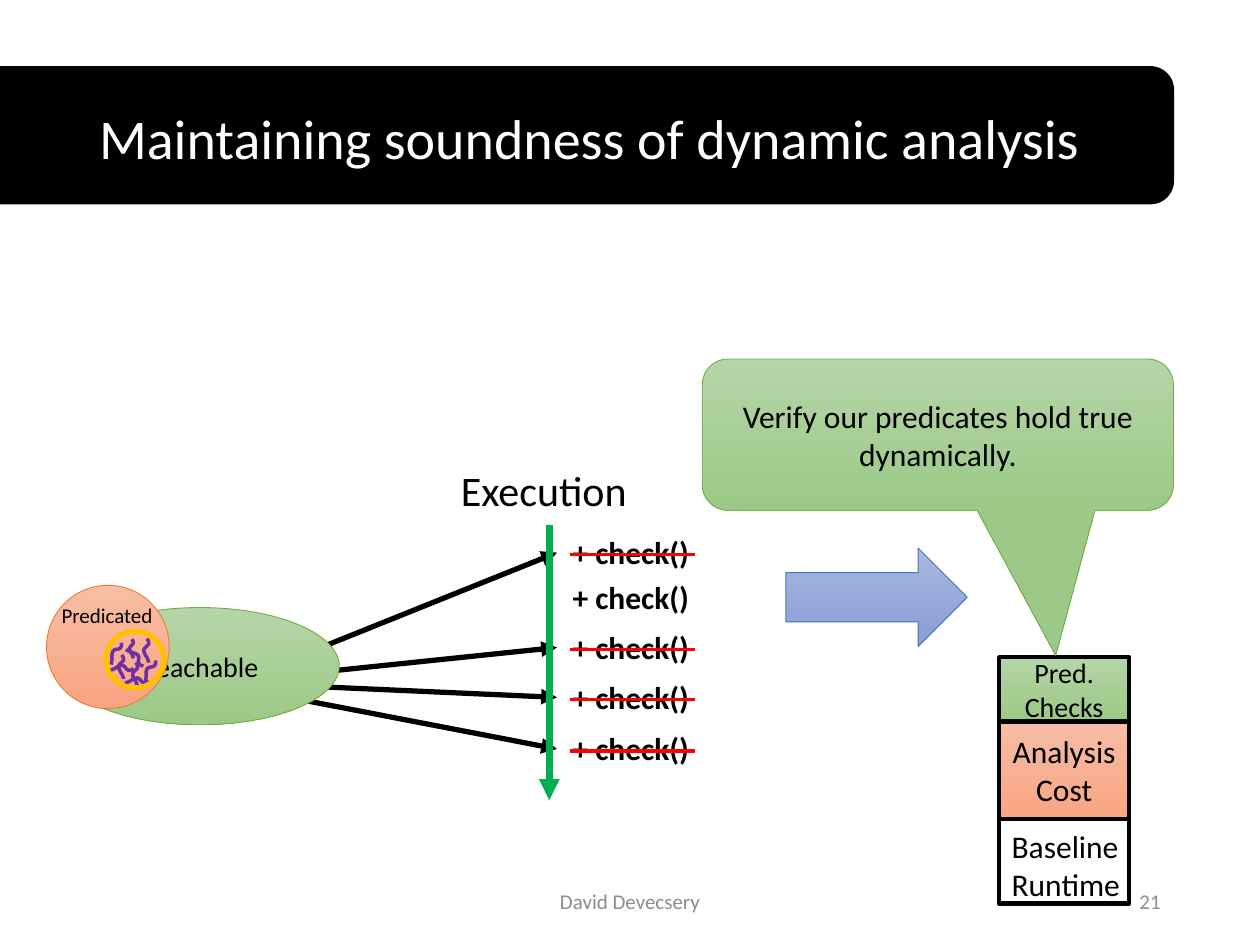
from dataclasses import dataclass

from lxml import etree
from pptx import Presentation
from pptx.dml.color import RGBColor
from pptx.enum.shapes import MSO_CONNECTOR, MSO_SHAPE
from pptx.enum.text import MSO_ANCHOR, PP_ALIGN
from pptx.oxml.ns import qn
from pptx.util import Pt

LEFT, CENTER, RIGHT = PP_ALIGN.LEFT, PP_ALIGN.CENTER, PP_ALIGN.RIGHT
TOP, MIDDLE = MSO_ANCHOR.TOP, MSO_ANCHOR.MIDDLE
STRAIGHT = MSO_CONNECTOR.STRAIGHT
RECT, OVAL = MSO_SHAPE.RECTANGLE, MSO_SHAPE.OVAL
ROUND_RECT, RIGHT_ARROW = MSO_SHAPE.ROUNDED_RECTANGLE, MSO_SHAPE.RIGHT_ARROW
CALLOUT = MSO_SHAPE.ROUNDED_RECTANGULAR_CALLOUT


@dataclass(frozen=True)
class Theme:
    """Font, colours and type sizes of the slide."""
    font: str = "Calibri"
    black: str = "000000"
    white: str = "FFFFFF"
    grey: str = "8C8C8C"
    red: str = "FF0000"
    axis: str = "00B050"
    purple: str = "7030A0"
    gold: str = "FFC000"
    blue_line: str = "4472C4"
    green_line: str = "70AD47"
    orange_line: str = "ED7D31"
    blue: tuple = ("A8B7DF", "889ED7")
    green: tuple = ("B5D5A7", "9CC987")
    orange: tuple = ("F7BDA5", "F8A582")
    title: int = 32
    heading: int = 24
    body: int = 18
    label: int = 16
    small: int = 12


T = Theme()
CHECK_TOPS = (301.1, 326.9, 355.3, 383.8, 413.3)
ARROW_STARTS = {0: (174.2, 373.7), 2: (178.6, 384.5),
                3: (177.1, 392.2), 4: (167, 398.9)}
CURVE = [(0, 2.9), (0.2, 2.9), (0.7, 2.9), (2.2, 2.2),
         (2.9, 2.2), (5, 0), (7.2, 0),
         (8.6, 0), (9.6, 2.5), (10.8, 2.9),
         (12.2, 3.4), (13, 2.2), (13.7, 1.8)]
SQUIGGLES = [(71.3, 387.4, 0, 1), (62.6, 380.2, 0, 1),
             (70.6, 373.7, 47.8, 1), (78.5, 381.6, 299.8, 1),
             (59, 371.5, 299.8, 1), (77, 370.1, 270, 1),
             (70.6, 383.8, 270, 1), (62.6, 379.4, 270, 1),
             (69.8, 369.4, 270, 0.8)]


def rgb(color):
    """Return the colour object for a hex string."""
    return RGBColor.from_string(color)


def write(sp, lines, size, color=T.black, align=CENTER, anchor=MIDDLE, bold=False):
    """Write one paragraph per line into a shape."""
    tf = sp.text_frame
    tf.word_wrap = True
    tf.vertical_anchor = anchor
    for i, line in enumerate(lines):
        p = tf.add_paragraph() if i else tf.paragraphs[0]
        p.alignment = align
        r = p.add_run()
        r.text = line
        r.font.name, r.font.size, r.font.bold = T.font, Pt(size), bold
        r.font.color.rgb = rgb(color)


def add_text(s, box, text, size, color=T.black, align=LEFT, anchor=TOP, bold=False):
    """Add a text box with a single paragraph."""
    sp = s.shapes.add_textbox(*map(Pt, box))
    write(sp, [text], size, color, align, anchor, bold)
    return sp


def paint(sp, fill, line, width):
    """Apply a solid, gradient or empty fill and an outline."""
    sp.shadow.inherit = False
    if fill is None:
        sp.fill.background()
    elif isinstance(fill, tuple):
        sp.fill.gradient()
        sp.fill.gradient_angle = 270
        for stop, color in zip(sp.fill.gradient_stops, fill):
            stop.color.rgb = rgb(color)
    else:
        sp.fill.solid()
        sp.fill.fore_color.rgb = rgb(fill)
    sp.line.color.rgb = rgb(line)
    sp.line.width = Pt(width)


def add_box(s, kind, box, fill, line, width=0.5):
    """Add a painted preset shape."""
    sp = s.shapes.add_shape(kind, *map(Pt, box))
    paint(sp, fill, line, width)
    return sp


def add_line(s, start, end, color, width, arrow=False):
    """Add a straight connector, with an optional arrowhead."""
    sp = s.shapes.add_connector(STRAIGHT, *map(Pt, (*start, *end)))
    sp.line.color.rgb = rgb(color)
    sp.line.width = Pt(width)
    if arrow:
        etree.SubElement(sp.line._get_or_add_ln(), qn("a:tailEnd"), type="triangle")
    etree.SubElement(sp._element.spPr, qn("a:effectLst"))


def add_squiggle(s, left, top, angle, factor):
    """Add one rotated squiggle of four cubic curves."""
    points = [(x * factor * 100, y * factor * 100) for x, y in CURVE]
    builder = s.shapes.build_freeform(*points[0], scale=Pt(1) / 100)
    builder.add_line_segments(points[1:], close=False)
    sp = builder.convert_to_shape(Pt(left), Pt(top))
    outline = next(sp._element.iter(qn("a:path")))
    segments = outline.findall(qn("a:lnTo"))
    for i in range(0, len(segments), 3):
        curve = etree.SubElement(outline, qn("a:cubicBezTo"))
        for segment in segments[i:i + 3]:
            curve.append(segment[0])
            outline.remove(segment)
    sp.rotation = angle
    paint(sp, None, T.purple, 2)


def add_frame(s):
    """Add the title band, title and footer."""
    add_box(s, ROUND_RECT, (-46, 38.3, 716.4, 78), T.black, T.black, 1)
    sp = add_text(s, (49.5, 28.8, 620.6, 104.4), "Maintaining soundness of dynamic analysis",
                  T.title, T.white, anchor=MIDDLE)
    sp.text_frame.paragraphs[0].line_spacing = 0.9
    add_text(s, (238.3, 500.4, 243.4, 28.8), "David Devecsery", T.small, T.grey, CENTER, MIDDLE)
    add_text(s, (508.3, 500.4, 162, 28.8), "21", T.small, T.grey, RIGHT, MIDDLE)


def add_execution(s):
    """Add the checks along the execution axis and the arrows to them."""
    for top in CHECK_TOPS:
        add_text(s, (320.1, top, 108, 28.8), "+ check()", T.body, bold=True)
    add_text(s, (256.3, 262.1, 115.2, 36), "Execution", T.heading)
    for row, start in ARROW_STARTS.items():
        top = CHECK_TOPS[row]
        add_line(s, (325.5, top + 15.8), (397.3, top + 15.8), T.red, 2)
        add_line(s, start, (318.3, top + 14.7), T.black, 3, True)
    add_line(s, (313.9, 299.8), (313.9, 457.2), T.axis, 4, True)


def add_state_sets(s):
    """Add the reachable and predicated sets with their squiggles."""
    sp = add_box(s, OVAL, (34.6, 347.2, 159.3, 67), T.green, T.green_line)
    write(sp, ["Reachable"], T.label)
    add_box(s, OVAL, (26.6, 334.5, 70.1, 70.4), T.orange, T.orange_line)
    add_text(s, (28.1, 340.6, 77, 21.6), "Predicated", T.small)
    for squiggle in SQUIGGLES:
        add_squiggle(s, *squiggle)
    add_box(s, OVAL, (60.5, 360.7, 33.1, 32.4), None, T.gold, 3)


def add_cost_stack(s):
    """Add the stacked runtime costs and the callout."""
    left, width = 571, 74.2
    add_box(s, RECT, (left, 467.8, width, 48.6), T.white, T.black, 2.5)
    add_text(s, (left, 469, 82.1, 51.1), "Baseline Runtime", T.body)
    costs = [(412.2, 55.8, T.orange, ["Analysis", "Cost"], T.body),
             (375.5, 36.7, T.green, ["Pred. Checks"], T.label)]
    for top, height, fill, lines, size in costs:
        sp = add_box(s, RECT, (left, top, width, height), fill, T.black, 2.5)
        write(sp, lines, size)
    sp = add_box(s, CALLOUT, (401.3, 205.2, 269.3, 86.4), T.green, T.green_line)
    for i, value in enumerate((0.25, 1.46, 0.17)):
        sp.adjustments[i] = value
    write(sp, ["Verify our predicates hold true dynamically."], T.body)


def main():
    """Build the slide and save it."""
    prs = Presentation()
    prs.slide_width, prs.slide_height = Pt(720), Pt(540)
    s = prs.slides.add_slide(prs.slide_layouts[6])
    add_frame(s)
    add_box(s, RIGHT_ARROW, (449.1, 313.2, 103.7, 56.2), T.blue, T.blue_line)
    add_execution(s)
    add_state_sets(s)
    add_cost_stack(s)
    prs.save("out.pptx")


if __name__ == "__main__":
    main()
